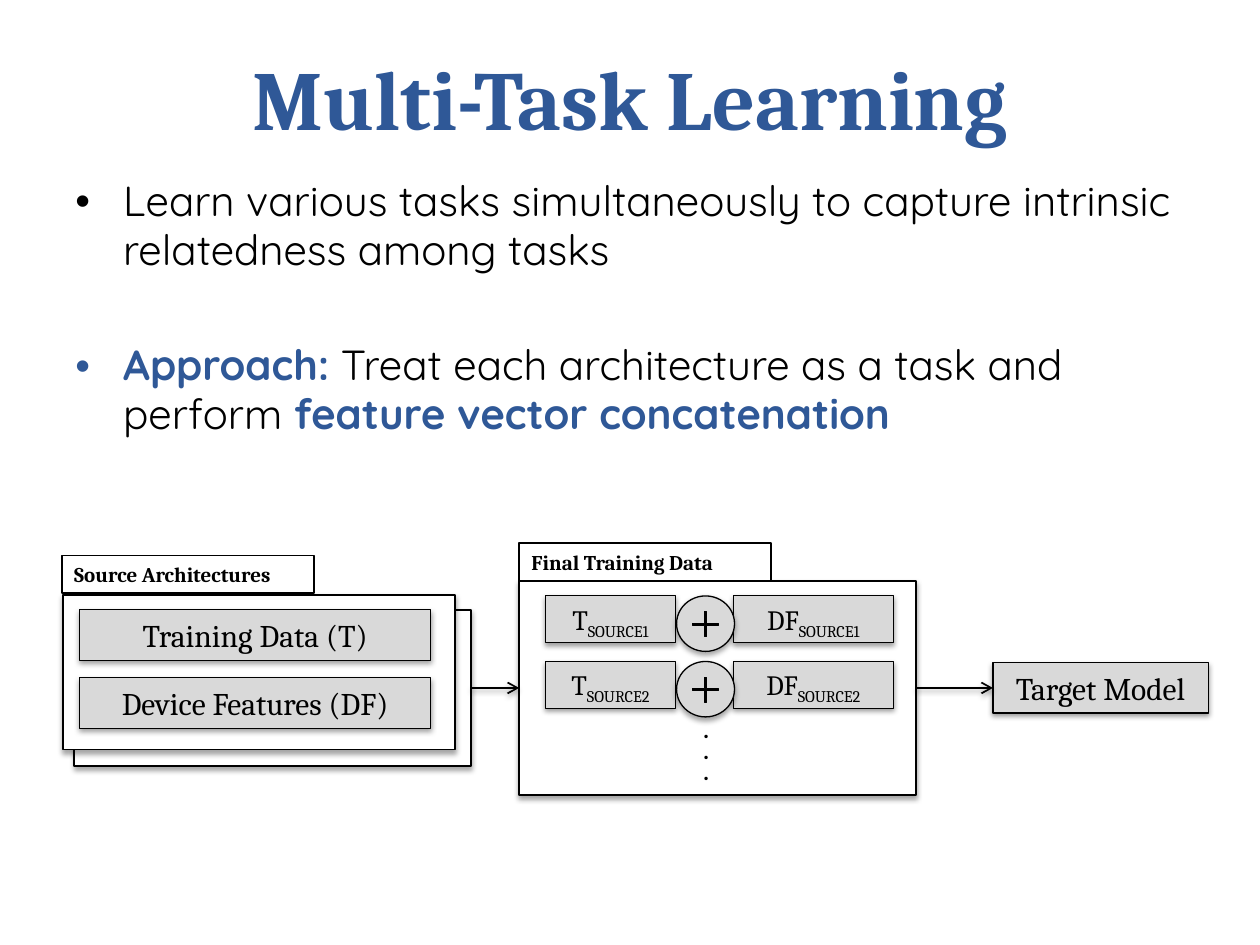
from lxml import etree
from pptx import Presentation
from pptx.dml.color import RGBColor
from pptx.enum.shapes import MSO_CONNECTOR, MSO_SHAPE
from pptx.enum.text import MSO_ANCHOR, PP_ALIGN
from pptx.oxml import parse_xml
from pptx.oxml.ns import nsdecls, qn
from pptx.util import Inches, Pt

COLORS = {"blue": "2F5897", "black": "000000", "white": "FFFFFF", "gray": "D9D9D9"}

# Content
TITLE = "Multi-Task Learning"
BULLETS = [  # each bullet is a list of (text, emphasized)
    [("Learn various tasks simultaneously to capture intrinsic "
      "relatedness among tasks", False)],
    [("Approach:", True),
     (" Treat each architecture as a task and perform ", False),
     ("feature vector concatenation", True)],
]
SOURCE_TAB = "Source Architectures"
SOURCE_PARTS = ["Training Data (T)", "Device Features (DF)"]
FINAL_TAB = "Final Training Data"
TERMS = [("T", 4.33, 1.03), ("DF", 5.82, 1.27)]  # name, left, width
SUBSCRIPTS = ["SOURCE1", "SOURCE2"]
TARGET = "Target Model"

# Text formats
HEAD = {"name": "Cambria", "size": Pt(48), "bold": True, "color": "blue"}
BODY = {"name": "Quicksand", "size": Pt(24), "bold": False, "color": "black"}
STRONG = {**BODY, "bold": True, "color": "blue"}
LABEL = {"name": "Cambria", "size": Pt(18), "bold": False, "color": "black"}
TERM = {**LABEL, "size": Pt(16)}
TAB = {**LABEL, "size": Pt(12), "bold": True}
DOT = {"name": "Montserrat", "size": Pt(10), "bold": True, "color": "black"}

# Shadows: opacity in percent, distance in points
FRAME_SHADOW, PART_SHADOW = (35, 1.8), (38, 1.6)


def rgb(name):
    return RGBColor.from_string(COLORS[name])


def add_run(p, text, fmt):
    r = p.add_run()
    r.text = text
    for key, value in fmt.items():
        if key == "color":
            r.font.color.rgb = rgb(value)
        else:
            setattr(r.font, key, value)
    return r


def add_shadow(shape, opacity, distance):
    sp_pr = shape._element.spPr
    effects = sp_pr.find(qn("a:effectLst"))
    if effects is None:
        effects = etree.SubElement(sp_pr, qn("a:effectLst"))
    effects.append(parse_xml(
        f'<a:outerShdw {nsdecls("a")} blurRad="{Pt(3.1)}" dist="{Pt(distance)}" '
        f'dir="5400000" rotWithShape="0"><a:srgbClr val="{COLORS["black"]}">'
        f'<a:alpha val="{opacity * 1000}"/></a:srgbClr></a:outerShdw>'))


def add_box(shapes, at, fill="gray", line=0.5, shadow=PART_SHADOW,
            kind=MSO_SHAPE.RECTANGLE):
    sp = shapes.add_shape(kind, *map(Inches, at))
    sp.shadow.inherit = False
    sp.fill.solid()
    sp.fill.fore_color.rgb = rgb(fill)
    if line:
        sp.line.color.rgb = rgb("black")
        sp.line.width = Pt(line)
    else:
        sp.line.fill.background()
    if shadow:
        add_shadow(sp, *shadow)
    return sp


def write(sp, lines, fmt, align=PP_ALIGN.CENTER):
    tf = sp.text_frame
    tf.word_wrap = True
    tf.vertical_anchor = MSO_ANCHOR.TOP
    for i, text in enumerate(lines):
        p = tf.add_paragraph() if i else tf.paragraphs[0]
        p.alignment = align
        add_run(p, text, fmt)
    return tf


def add_tab(s, text, left, top):
    sp = add_box(s.shapes, (left, top, 2, 0.3), "white", 1, None)
    write(sp, [text], TAB, PP_ALIGN.LEFT)


def add_plus(s, left, top):
    group = s.shapes.add_group_shape()
    add_box(group.shapes, (left, top, 0.46, 0.44), "gray", 0.75, FRAME_SHADOW,
            MSO_SHAPE.OVAL)
    plus = add_box(group.shapes, (left + 0.09, top + 0.09, 0.28, 0.27), "black",
                   0.75, None, MSO_SHAPE.MATH_PLUS)
    plus.adjustments[0] = 0.057


def add_arrow(s, start, end):
    c = s.shapes.add_connector(MSO_CONNECTOR.STRAIGHT, 0, 0, 0, 0)
    c.begin_connect(start, 3)
    c.end_connect(end, 1)
    c.line.color.rgb = rgb("black")
    c.line.width = Pt(1)
    etree.SubElement(c.line._get_or_add_ln(), qn("a:tailEnd"), type="arrow")
    add_shadow(c, *PART_SHADOW)


def add_title(s):
    tf = s.shapes.add_textbox(Inches(0.5), 0, Inches(9), Inches(1.22)).text_frame
    tf.word_wrap = True
    tf.vertical_anchor = MSO_ANCHOR.BOTTOM
    p = tf.paragraphs[0]
    p.alignment = PP_ALIGN.CENTER
    p.line_spacing = Pt(58)
    add_run(p, TITLE, HEAD)


def add_bullets(s):
    box = s.shapes.add_textbox(*map(Inches, (0.5, 1.36, 9, 2.4)))
    tf = box.text_frame
    tf.word_wrap = True
    for i, runs in enumerate(BULLETS):
        p = tf.add_paragraph() if i else tf.paragraphs[0]
        p.line_spacing = 0.97
        if i:
            p.space_before = Pt(38)
        p_pr = p._p.get_or_add_pPr()
        p_pr.set("marL", str(Inches(0.38)))
        p_pr.set("indent", str(Inches(-0.38)))
        etree.SubElement(p_pr, qn("a:buFont"), typeface="Arial")
        etree.SubElement(p_pr, qn("a:buChar"), char="•")
        for text, strong in runs:
            add_run(p, text, STRONG if strong else BODY)


def add_sources(s):
    back, _ = [add_box(s.shapes, at, "white", 1, FRAME_SHADOW)
               for at in ((0.59, 4.84, 3.15, 1.24), (0.5, 4.72, 3.11, 1.23))]
    for i, text in enumerate(SOURCE_PARTS):
        write(add_box(s.shapes, (0.63, 4.84 + 0.54 * i, 2.79, 0.4)), [text], LABEL)
    add_tab(s, SOURCE_TAB, 0.49, 4.41)
    return back


def add_final_data(s):
    frame = add_box(s.shapes, (4.12, 4.61, 3.15, 1.7), "white", 1, FRAME_SHADOW)
    dots = add_box(s.shapes, (5.42, 5.67, 0.37, 0.61), "white", 0, None)
    write(dots, ["."] * 3, DOT)
    for i, subscript in enumerate(SUBSCRIPTS):
        top = 4.73 + 0.52 * i
        for name, left, width in TERMS:
            tf = write(add_box(s.shapes, (left, top, width, 0.37)), [name], TERM)
            r = add_run(tf.paragraphs[0], subscript, TERM)
            r.font._element.set("baseline", "-25000")
        add_plus(s, 5.37, top)
    add_tab(s, FINAL_TAB, 4.12, 4.31)
    return frame


def main():
    prs = Presentation()
    prs.slide_width, prs.slide_height = Inches(10), Inches(7.5)
    s = prs.slides.add_slide(prs.slide_layouts[6])
    add_title(s)
    add_bullets(s)

    # Pipeline: sources, final data, target
    sources = add_sources(s)
    final_data = add_final_data(s)
    target = add_box(s.shapes, (7.88, 5.26, 1.71, 0.4), line=0.75)
    write(target, [TARGET], LABEL)
    add_arrow(s, sources, final_data)
    add_arrow(s, final_data, target)
    prs.save("out.pptx")


if __name__ == "__main__":
    main()
